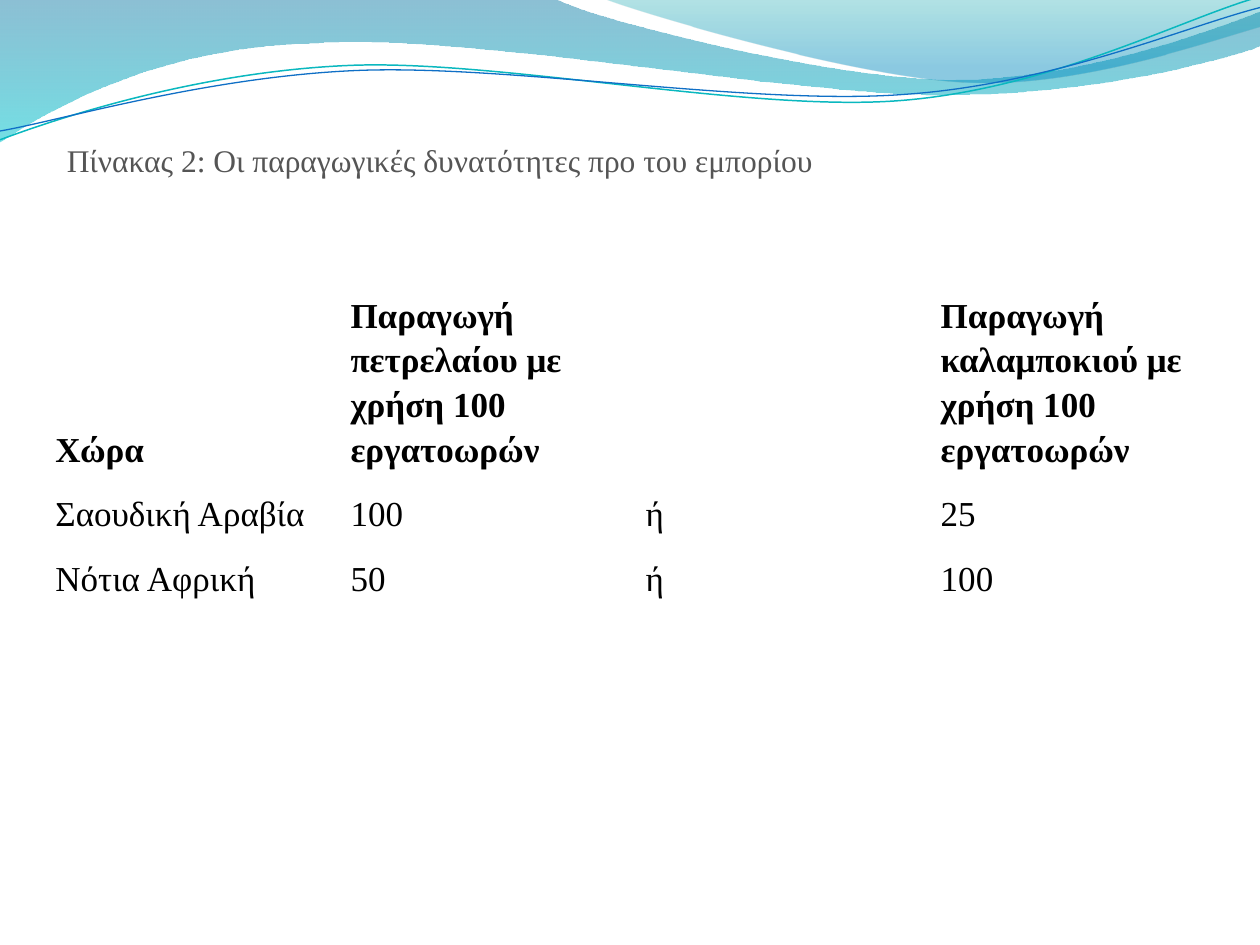
from dataclasses import dataclass

from lxml import etree
from pptx import Presentation
from pptx.dml.color import RGBColor
from pptx.enum.text import MSO_ANCHOR, MSO_AUTO_SIZE, PP_ALIGN
from pptx.oxml.ns import qn
from pptx.util import Inches, Pt

TOP, MIDDLE, BOTTOM = MSO_ANCHOR.TOP, MSO_ANCHOR.MIDDLE, MSO_ANCHOR.BOTTOM
LEFT = PP_ALIGN.LEFT
NO_FIT = MSO_AUTO_SIZE.NONE

WAVE = [(0, 0), (4.4, -0.01), (4.76, 0.17, 6.64, 0.63, 7.58, 0.63),
        (8.53, 0.63, 9.58, 0.26, 10, 0.09), (10.01, 0.36),
        (9.83, 0.44, 8.7, 0.76, 7.46, 0.75),
        (6.22, 0.75, 3.82, 0.28, 2.57, 0.34),
        (1.29, 0.36, 0.46, 0.83, -0.01, 1.13), (0, 0)]
CREST = [(4.79, -0.01), (5.09, 0.11, 6.82, 0.62, 7.69, 0.65),
         (8.56, 0.69, 9.61, 0.32, 10, 0.21), (10, 0), (4.79, -0.01)]
TEAL_LINE = [(0, 1.11), (0.48, 0.93, 1.58, 0.57, 2.77, 0.52),
             (3.95, 0.47, 5.93, 0.89, 7.13, 0.8),
             (8.33, 0.71, 9.38, 0.15, 9.98, -0.02)]
BLUE_LINE = [(0, 1.04), (0.47, 0.96, 1.64, 0.61, 2.83, 0.56),
             (4.03, 0.51, 5.97, 0.84, 7.17, 0.75),
             (8.36, 0.67, 9.41, 0.21, 10, 0.06)]
ROWS = [
    ["Χώρα", "Παραγωγή πετρελαίου με χρήση 100 εργατοωρών", "",
     "Παραγωγή καλαμποκιού με χρήση 100 εργατοωρών"],
    ["Σαουδική Αραβία", "100", "ή", "25"],
    ["Νότια Αφρική", "50", "ή", "100"],
]


@dataclass(frozen=True)
class Theme:
    """Colours, gradients, font and type sizes of the slide."""
    font: str = "Times New Roman"
    title: str = "555555"
    text: str = "000000"
    teal: str = "0AB8BF"
    blue: str = "0F6FC6"
    wave: tuple = ((0, "0074A1", 45), (1, "00C6CF", 55))
    crest: tuple = ((0, "00A1A9", 30), (0.8, "008BBF", 45))
    title_size: int = 18
    cell_size: int = 20


class Deck:
    """Holds the theme and the current slide and draws each kind of element."""

    def __init__(self, theme):
        self.theme = theme
        self.prs = Presentation()
        self.prs.slide_width, self.prs.slide_height = Inches(10), Inches(7.5)
        self.slide = self.prs.slides.add_slide(self.prs.slide_layouts[5])

    def style(self, para, size, color, bold=False):
        para.alignment = LEFT
        for run in para.runs:
            font = run.font
            font.name, font.size, font.bold = self.theme.font, Pt(size), bold
            font.color.rgb = RGBColor.from_string(color)

    def shape(self, route, close):
        first, *rest = [(Inches(part[-2]), Inches(part[-1])) for part in route]
        pen = self.slide.shapes.build_freeform(*first)
        pen.add_line_segments(rest, close=close)
        shape = pen.convert_to_shape()
        shape.shadow.inherit = False
        for node, part in zip(list(shape.element.iter(qn("a:lnTo"))), route[1:]):
            if len(part) == 6:
                self.bend(shape, node, part)
        return shape

    def bend(self, shape, node, part):
        curve = etree.Element(qn("a:cubicBezTo"))
        for x, y in zip(part[::2], part[1::2]):
            etree.SubElement(curve, qn("a:pt"), x=str(Inches(x) - shape.left),
                             y=str(Inches(y) - shape.top))
        node.getparent().replace(node, curve)

    def wave(self, route, stops):
        shape = self.shape(route, True)
        shape.line.fill.background()
        shape.fill.gradient()
        shape.fill.gradient_angle = 270
        for stop, (place, color, _) in zip(shape.fill.gradient_stops, stops):
            stop.position = place
            stop.color.rgb = RGBColor.from_string(color)
        for node, (_, _, alpha) in zip(shape.element.iter(qn("a:srgbClr")), stops):
            etree.SubElement(node, qn("a:alpha"), val=str(alpha * 1000))

    def curve(self, route, color, width):
        shape = self.shape(route, False)
        shape.fill.background()
        shape.line.color.rgb = RGBColor.from_string(color)
        shape.line.width = Pt(width)

    def title(self, text, left, top, width, height):
        box = self.slide.shapes.title
        box.left, box.top = Inches(left), Inches(top)
        box.width, box.height = Inches(width), Inches(height)
        frame = box.text_frame
        frame.text = text
        frame.word_wrap, frame.auto_size = True, NO_FIT
        frame.vertical_anchor = TOP
        self.style(frame.paragraphs[0], self.theme.title_size, self.theme.title)

    def table(self, rows, left, top, width, height):
        table = self.slide.shapes.add_table(
            len(rows), len(rows[0]), Inches(left), Inches(top),
            Inches(width), Inches(height)).table
        table.first_row = table.horz_banding = False
        for r, texts in enumerate(rows):
            table.rows[r].height = Inches(0)
            for c, text in enumerate(texts):
                self.cell(table.cell(r, c), text, r == 0)

    def cell(self, cell, text, head):
        cell.fill.background()
        cell.margin_left = cell.margin_right = Inches(0.16)
        cell.margin_top = cell.margin_bottom = Inches(0.08)
        cell.vertical_anchor = BOTTOM if head else MIDDLE
        cell.text_frame.text = text
        para = cell.text_frame.paragraphs[0]
        para.line_spacing = 1.15
        self.style(para, self.theme.cell_size, self.theme.text, head)


def main():
    theme = Theme()
    deck = Deck(theme)
    deck.wave(WAVE, theme.wave)
    deck.wave(CREST, theme.crest)
    deck.curve(TEAL_LINE, theme.teal, 0.85)
    deck.curve(BLUE_LINE, theme.blue, 0.75)
    deck.table(ROWS, 0.28, 2.23, 9.37, 2.8)
    deck.title("Πίνακας 2: Οι παραγωγικές δυνατότητες προ του εμπορίου",
               0.43, 1.07, 8.98, 0.4)
    deck.prs.save("out.pptx")


if __name__ == "__main__":
    main()
